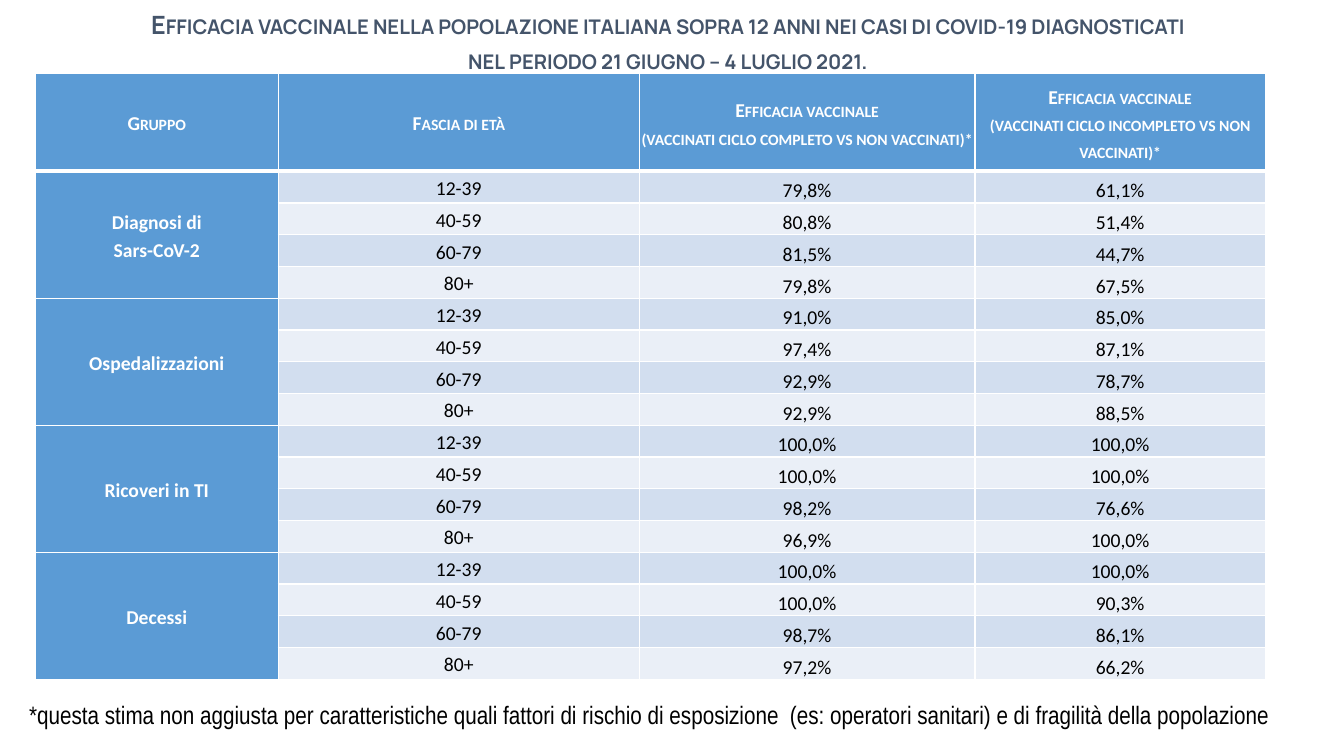
from dataclasses import dataclass
from lxml.etree import SubElement as Sub
from pptx import Presentation
from pptx.dml.color import RGBColor as Rgb
from pptx.enum.text import MSO_ANCHOR as Anchor, MSO_AUTO_SIZE as Auto, PP_ALIGN as Align
from pptx.oxml.ns import qn
from pptx.util import Inches, Pt


@dataclass(frozen=True)
class Theme:
    head: str = "5B9BD5"
    dark: str = "D2DEEF"
    light: str = "EAEFF7"
    title: str = "44546A"
    white: str = "FFFFFF"
    black: str = "000000"
    large: int = 18
    small: int = 14


theme = Theme()


def write(frame, text, font, size, color, bold=False, caps=False, align=Align.CENTER, lead=1.15):
    frame.text = text
    for para in frame.paragraphs:
        para.alignment = align
        para.line_spacing = lead
        for run in para.runs:
            run.font.name = font
            run.font.size = Pt(size)
            run.font.bold = bold
            run.font.color.rgb = Rgb.from_string(color)
            if caps:
                run.font._element.set("cap", "small")


def paint(cell, color, base=1):
    # White borders come before the fill in the cell's properties
    props = cell._tc.get_or_add_tcPr()
    for side, width in (("L", 1), ("R", 1), ("T", 1), ("B", base)):
        line = Sub(props, qn(f"a:ln{side}"), w=str(Pt(width)))
        Sub(Sub(line, qn("a:solidFill")), qn("a:srgbClr"), val=theme.white)
    cell.fill.solid()
    cell.fill.fore_color.rgb = Rgb.from_string(color)


# Slide and a grid of 100 columns by 100 rows
deck = Presentation()
deck.slide_width, deck.slide_height = Inches(13.33), Inches(7.5)
col, row = deck.slide_width / 100, deck.slide_height / 100
slide = deck.slides.add_slide(deck.slide_layouts[5])

# Title
title = slide.shapes.title
title.left, title.top = 0, 0
title.width, title.height = int(99.4 * col), int(10.27 * row)
frame = title.text_frame
frame.word_wrap = True
frame.auto_size = Auto.SHAPE_TO_FIT_TEXT
frame.vertical_anchor = Anchor.TOP
write(frame, "Efficacia vaccinale nella popolazione italiana sopra 12 anni nei casi di covid-19 diagnosticati\n"
      "nel periodo 21 giugno – 4 luglio 2021.", "Manrope", theme.large, theme.title, True, True)

# Table content
heads = [
    "Gruppo",
    "Fascia di età",
    "Efficacia vaccinale\n(vaccinati ciclo completo vs non vaccinati)*",
    "Efficacia vaccinale\n(vaccinati ciclo incompleto vs non vaccinati)*",
]
ages = ["12-39", "40-59", "60-79", "80+"]
groups = {
    "Diagnosi di\nSars-CoV-2": [("79,8%", "61,1%"), ("80,8%", "51,4%"), ("81,5%", "44,7%"), ("79,8%", "67,5%")],
    "Ospedalizzazioni": [("91,0%", "85,0%"), ("97,4%", "87,1%"), ("92,9%", "78,7%"), ("92,9%", "88,5%")],
    "Ricoveri in TI": [("100,0%", "100,0%"), ("100,0%", "100,0%"), ("98,2%", "76,6%"), ("96,9%", "100,0%")],
    "Decessi": [("100,0%", "100,0%"), ("100,0%", "90,3%"), ("98,7%", "86,1%"), ("97,2%", "66,2%")],
}
lines = [heads]
for group, pairs in groups.items():
    for age, pair in zip(ages, pairs):
        lines.append([group if age == ages[0] else "", age, *pair])

# Table grid
wide = [18.08, 26.86, 24.98, 21.61]
tall = [12.93] + [4.2] * (len(lines) - 1)
table = slide.shapes.add_table(len(lines), len(wide), int(2.63 * col), int(9.73 * row),
                               int(sum(wide) * col), int(sum(tall) * row)).table
for part, size in zip(table.columns, wide):
    part.width = int(size * col)
for part, size in zip(table.rows, tall):
    part.height = int(size * row)

# Table cells
for r, line in enumerate(lines):
    for c, text in enumerate(line):
        cell = table.cell(r, c)
        top, value = r == 0, c > 1
        label = top or c == 0
        cell.margin_left = cell.margin_right = Inches(0.01 if value else 0.04)
        cell.margin_top = Inches(0.01 if value else 0)
        cell.margin_bottom = 0
        cell.vertical_anchor = Anchor.BOTTOM if value and not top else Anchor.MIDDLE
        band = theme.dark if r % 2 else theme.light
        paint(cell, theme.head if label else band, 3 if top else 1)
        write(cell.text_frame, text, "Calibri", theme.small,
              theme.white if label else theme.black, label, top)
for r in range(1, len(lines), len(ages)):
    table.cell(r, 0).merge(table.cell(r + len(ages) - 1, 0))

# Footnote
note = slide.shapes.add_textbox(int(1.43 * col), int(91.87 * row), int(94.9 * col), int(5.33 * row))
note.text_frame.word_wrap = True
note.text_frame.auto_size = Auto.SHAPE_TO_FIT_TEXT
write(note.text_frame, "*questa stima non aggiusta per caratteristiche quali fattori di rischio di esposizione  "
      "(es: operatori sanitari) e di fragilità della popolazione",
      "Arial Narrow", theme.large, theme.black, align=Align.LEFT, lead=1.0)

deck.save("out.pptx")
